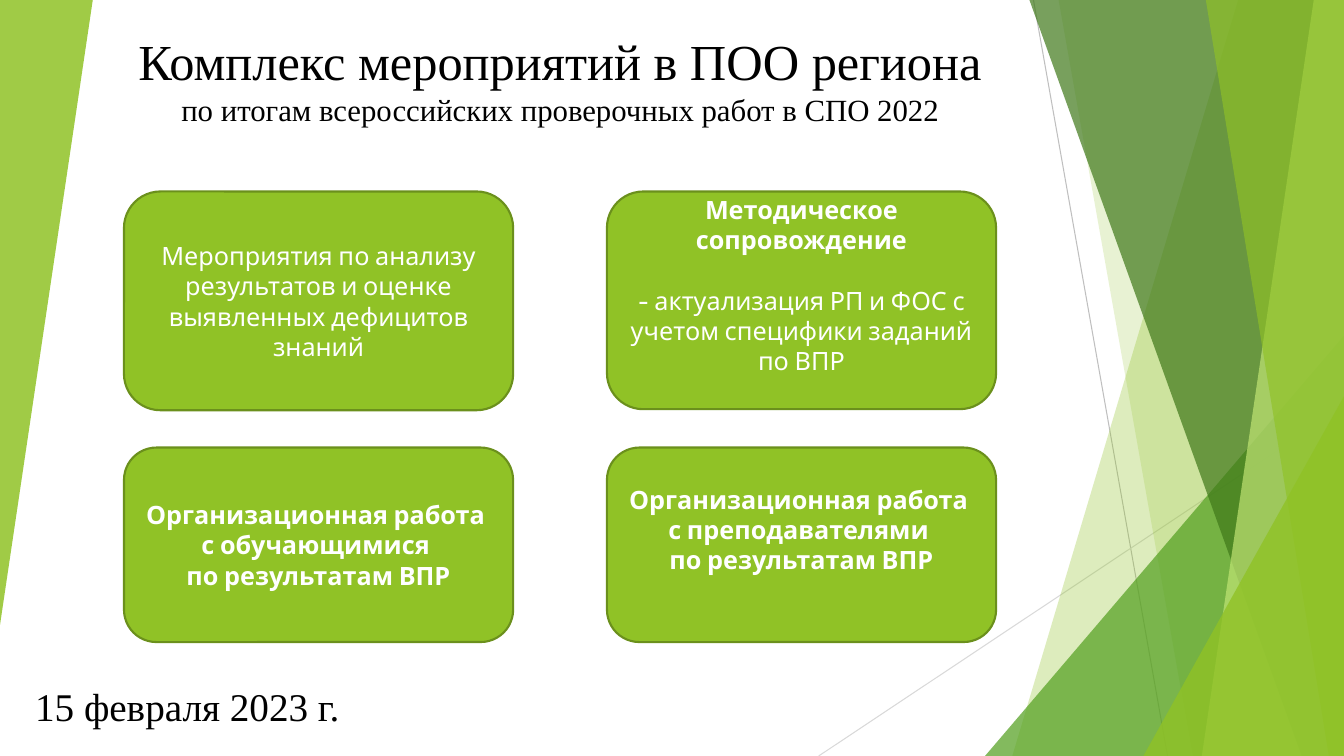
from lxml.etree import SubElement
from pptx import Presentation
from pptx.dml.color import RGBColor
from pptx.enum.shapes import MSO_CONNECTOR, MSO_SHAPE
from pptx.enum.text import MSO_ANCHOR, MSO_AUTO_SIZE, PP_ALIGN
from pptx.oxml.ns import qn
from pptx.util import Inches, Pt

PAGE_WIDTH = 13.33
PAGE_HEIGHT = 7.5
GREEN = "90C226"
LINE_HEIGHT = 21.6


def color(value):
    return RGBColor.from_string(value)


def style_paragraph(paragraph, text, size, font, text_color, bold=False, align=PP_ALIGN.CENTER):
    paragraph.text = text
    paragraph.alignment = align
    paragraph.font.size = Pt(size)
    paragraph.font.name = font
    paragraph.font.bold = bold
    paragraph.font.color.rgb = color(text_color)


def paint_facet(shape, fill, opacity):
    shape.shadow.inherit = False
    shape.fill.solid()
    shape.fill.fore_color.rgb = color(fill)
    shape.line.fill.background()
    fill_color = shape.element.spPr.find(qn("a:solidFill")).find(qn("a:srgbClr"))
    SubElement(fill_color, qn("a:alpha")).set("val", str(opacity * 1000))


def add_thin_line(slide, start, end, line_color):
    points = [Inches(value) for value in (*start, *end)]
    connector = slide.shapes.add_connector(MSO_CONNECTOR.STRAIGHT, *points)
    connector.line.color.rgb = color(line_color)
    connector.line.width = Pt(0.75)
    SubElement(connector.element.spPr, qn("a:effectLst"))


def add_band(slide, top_left, bottom_left, right, height, fill, opacity):
    corners = [(top_left, 0), (right, 0), (right, height), (bottom_left, height)]
    points = [(Inches(x), Inches(y)) for x, y in corners]
    builder = slide.shapes.build_freeform(*points[0], scale=1.0)
    builder.add_line_segments(points[1:], close=True)
    paint_facet(builder.convert_to_shape(), fill, opacity)


def add_wedge(slide, left, top, width, height, fill, opacity, rotation=0):
    box = [Inches(value) for value in (left, top, width, height)]
    wedge = slide.shapes.add_shape(MSO_SHAPE.ISOSCELES_TRIANGLE, *box)
    wedge.adjustments[0] = 1
    wedge.rotation = rotation
    paint_facet(wedge, fill, opacity)


def add_corner_wedge(slide, right, bottom, width, height, fill, opacity):
    add_wedge(slide, right - width, bottom - height, width, height, fill, opacity)


def add_facets(slide, right, bottom):
    add_thin_line(slide, (right - 3.08, 0), (right - 1.75, bottom), "BFBFBF")
    add_thin_line(slide, (right, bottom - 3.47), (right - 5.21, bottom), "D9D9D9")
    add_band(slide, right - 1.05, right - 3.29, right, bottom, GREEN, 30)
    add_band(slide, right - 2.83, right - 1.5, right, bottom, GREEN, 20)
    add_corner_wedge(slide, right, bottom, 3.56, 4.17, "54A021", 72)
    add_band(slide, right - 3.12, right - 0.42, right, bottom, "3F7819", 70)
    add_band(slide, right - 0.3, right - 1.41, right, bottom, "C0E474", 70)
    add_band(slide, right - 1.37, right - 0.15, right, bottom, GREEN, 65)
    add_corner_wedge(slide, right, bottom, 1.99, 3.57, GREEN, 80)
    add_wedge(slide, 0, 0, 0.92, 6.2, GREEN, 85, rotation=180)


def add_heading(slide, left, top, width, height):
    title = slide.shapes.title
    title.left, title.top = Inches(left), Inches(top)
    title.width, title.height = Inches(width), Inches(height)
    frame = title.text_frame
    frame.word_wrap = False
    frame.auto_size = MSO_AUTO_SIZE.SHAPE_TO_FIT_TEXT
    frame.vertical_anchor = MSO_ANCHOR.TOP
    style_paragraph(frame.paragraphs[0], "Комплекс мероприятий в ПОО региона",
                    36, "Times New Roman", "000000")
    style_paragraph(frame.add_paragraph(), "по итогам всероссийских проверочных работ в СПО 2022",
                    22, "Times New Roman", "000000")


def add_date(slide, left, top, width, height):
    box = [Inches(value) for value in (left, top, width, height)]
    frame = slide.shapes.add_textbox(*box).text_frame
    frame.word_wrap = False
    frame.auto_size = MSO_AUTO_SIZE.SHAPE_TO_FIT_TEXT
    style_paragraph(frame.paragraphs[0], "15 февраля 2023 г.",
                    28, "Times New Roman", "000000", align=PP_ALIGN.LEFT)


def add_card(slide, left, top, width, height, lines, lines_below=0):
    box = [Inches(value) for value in (left, top, width, height)]
    card = slide.shapes.add_shape(MSO_SHAPE.ROUNDED_RECTANGLE, *box)
    card.shadow.inherit = False
    card.fill.solid()
    card.fill.fore_color.rgb = color(GREEN)
    card.line.color.rgb = color("6B901C")
    card.line.width = Pt(1.5)
    frame = card.text_frame
    frame.word_wrap = True
    frame.vertical_anchor = MSO_ANCHOR.MIDDLE
    frame.margin_bottom = Inches(0.05) + Pt(LINE_HEIGHT * lines_below)
    for index, (text, bold, lines_above) in enumerate(lines):
        paragraph = frame.add_paragraph() if index else frame.paragraphs[0]
        style_paragraph(paragraph, text, 18, "Cabin", "FFFFFF", bold)
        paragraph.space_before = Pt(LINE_HEIGHT * lines_above)


def add_cards(slide, left, top):
    width, column_step, row_step = 3.86, 4.79, 2.54
    right_column, lower_row = left + column_step, top + row_step
    add_card(slide, left, top, width, 2.17, [
        ("Мероприятия по анализу результатов и оценке выявленных дефицитов знаний", False, 0),
    ])
    add_card(slide, right_column, top, width, 2.16, [
        ("Методическое сопровождение", True, 0),
        ("- актуализация РП и ФОС с учетом специфики заданий по ВПР", False, 1),
    ], lines_below=1)
    audiences = [(left, "с обучающимися ", 0), (right_column, "с преподавателями ", 1)]
    for column, audience, lines_below in audiences:
        add_card(slide, column, lower_row, width, 1.93, [
            ("Организационная работа ", True, 0),
            (audience, True, 0),
            ("по результатам ВПР", True, 0),
        ], lines_below)


def main():
    presentation = Presentation()
    presentation.slide_width = Inches(PAGE_WIDTH)
    presentation.slide_height = Inches(PAGE_HEIGHT)
    slide = presentation.slides.add_slide(presentation.slide_layouts[5])
    add_facets(slide, PAGE_WIDTH, PAGE_HEIGHT)
    add_heading(slide, 1.23, 0.25, 8.65, 1.08)
    add_date(slide, 0.25, 6.72, 3.25, 0.57)
    add_cards(slide, 1.23, 1.9)
    presentation.save("out.pptx")


if __name__ == "__main__":
    main()
